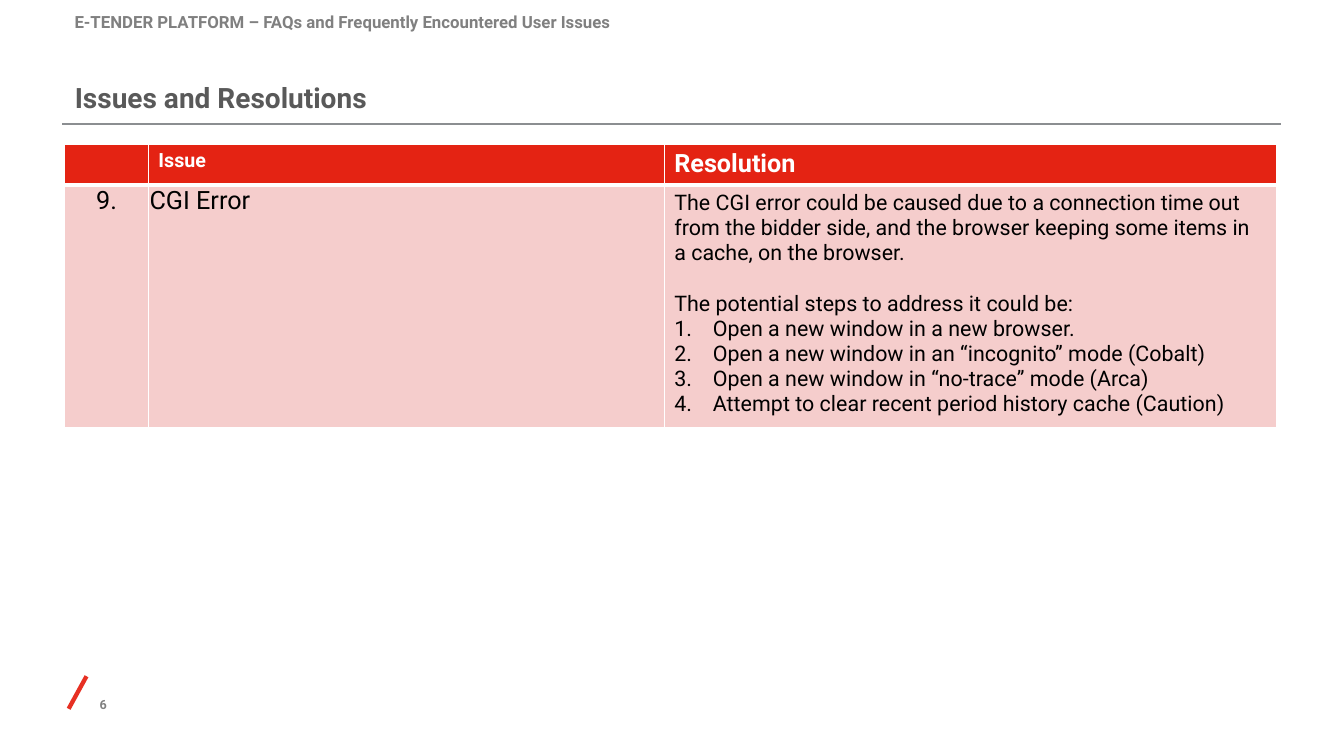
"""Build the issues and resolutions slide of the e-tender platform FAQ deck."""
from lxml.etree import SubElement
from pptx import Presentation
from pptx.dml.color import RGBColor
from pptx.enum.shapes import MSO_CONNECTOR
from pptx.enum.text import MSO_ANCHOR, MSO_AUTO_SIZE, PP_ALIGN
from pptx.oxml import parse_xml
from pptx.oxml.ns import nsdecls, qn
from pptx.util import Cm, Pt

RUNNING_HEAD = "E-TENDER PLATFORM – FAQs and Frequently Encountered User Issues"
TITLE = "Issues and Resolutions"
PAGE_NUMBER = "6"
HEADERS = [("", 14), ("Issue", 14), ("Resolution", 18)]
ISSUE = [("9.", PP_ALIGN.CENTER), ("CGI Error", PP_ALIGN.LEFT)]
CAUSE = ("The CGI error could be caused due to a connection time out from the bidder side, "
         "and the browser keeping some items in a cache, on the browser.")
STEPS_INTRO = "The potential steps to address it could be:"
STEPS = [
    "Open a new window in a new browser.",
    "Open a new window in an “incognito” mode (Cobalt)",
    "Open a new window in “no-trace” mode (Arca)",
    "Attempt to clear recent period history cache (Caution)",
]
COLUMN_WIDTHS = [2.11, 13, 15.44]
ROW_HEIGHTS = [1.04, 6.1]
RULES = [
    (1.57, 3.12, 32.28, 3.12, "8B8E91", 1.65),
    (1.73, 17.86, 2.18, 17.04, "E73023", 3.05),
]
FONT = "Roboto"
RED, PINK, GREY, WHITE, BLACK = "E42313", "F5CDCC", "808080", "FFFFFF", "000000"
LEFT = 1.63
STEP_SIZE = 15.3


def color(value):
    return RGBColor.from_string(value)


def write(para, text, size, tone, bold=False, align=PP_ALIGN.LEFT):
    para.alignment = align
    para.font.size = Pt(size)
    if text:
        span = para.add_run()
        span.text = text
        span.font.name = FONT
        span.font.size = Pt(size)
        span.font.bold = bold
        span.font.color.rgb = color(tone)


def number(para):
    properties = para._p.get_or_add_pPr()
    properties.set("marL", str(Cm(0.97)))
    properties.set("indent", str(-Cm(0.97)))
    SubElement(properties, qn("a:buFont"), typeface="+mj-lt")
    SubElement(properties, qn("a:buAutoNum"), type="arabicPeriod")


def style_cell(cell, fill, top, bottom):
    cell.fill.solid()
    cell.fill.fore_color.rgb = color(fill)
    properties = cell._tc.get_or_add_tcPr()
    for index, (side, width) in enumerate([("L", 1), ("R", 1), ("T", top), ("B", bottom)]):
        properties.insert(index, parse_xml(
            f'<a:ln{side} {nsdecls("a")} w="{Pt(width)}"><a:solidFill>'
            f'<a:srgbClr val="{WHITE}"/></a:solidFill></a:ln{side}>'))


def add_text(page, place, text, size, align=PP_ALIGN.LEFT):
    box = page.shapes.add_textbox(*map(Cm, place))
    box.text_frame.word_wrap = True
    write(box.text_frame.paragraphs[0], text, size, GREY, True, align)
    return box.text_frame


def add_rule(page, x1, y1, x2, y2, tone, width):
    rule = page.shapes.add_connector(
        MSO_CONNECTOR.STRAIGHT, Cm(x1), Cm(y1), Cm(x2), Cm(y2))
    rule.line.color.rgb = color(tone)
    rule.line.width = Pt(width)
    SubElement(rule._element.spPr, qn("a:effectLst"))


def add_title(page):
    title = page.shapes.title
    title.left, title.top, title.width, title.height = map(Cm, (LEFT, 0.99, 29.06, 2.01))
    frame = title.text_frame
    frame.auto_size = MSO_AUTO_SIZE.NONE
    frame.vertical_anchor = MSO_ANCHOR.BOTTOM
    write(frame.paragraphs[0], TITLE, 20, "595959", True)


def add_issue_table(page):
    table = page.shapes.add_table(
        len(ROW_HEIGHTS), len(COLUMN_WIDTHS), Cm(LEFT), Cm(3.63),
        Cm(sum(COLUMN_WIDTHS)), Cm(sum(ROW_HEIGHTS))).table
    for column, width in zip(table.columns, COLUMN_WIDTHS):
        column.width = Cm(width)
    for row, height in zip(table.rows, ROW_HEIGHTS):
        row.height = Cm(height)

    for index, (text, size) in enumerate(HEADERS):
        header = table.cell(0, index)
        style_cell(header, RED, 1, 3)
        style_cell(table.cell(1, index), PINK, 3, 1)
        write(header.text_frame.paragraphs[0], text, size, WHITE, True)

    for index, (text, align) in enumerate(ISSUE):
        cell = table.cell(1, index)
        cell.margin_left = cell.margin_right = cell.margin_top = Cm(0.03)
        cell.margin_bottom = Cm(0.13)
        write(cell.text_frame.paragraphs[0], text, 18, BLACK, align=align)

    frame = table.cell(1, 2).text_frame
    write(frame.paragraphs[0], CAUSE, STEP_SIZE, BLACK)
    intro = frame.add_paragraph()
    intro.space_before = Pt(18)
    write(intro, STEPS_INTRO, STEP_SIZE, BLACK)
    for step in STEPS:
        para = frame.add_paragraph()
        number(para)
        write(para, step, STEP_SIZE, BLACK)


def main():
    deck = Presentation()
    deck.slide_width, deck.slide_height = Cm(33.87), Cm(19.05)
    page = deck.slides.add_slide(deck.slide_layouts[5])
    for rule in RULES:
        add_rule(page, *rule)
    add_text(page, (LEFT, 0.18, 20.93, 0.76), RUNNING_HEAD, 12)
    add_title(page)
    add_issue_table(page)
    footer = add_text(page, (1.24, 17.48, 1.45, 0.58), PAGE_NUMBER, 9, PP_ALIGN.RIGHT)
    footer.margin_left = footer.margin_right = footer.margin_top = 0
    footer.vertical_anchor = MSO_ANCHOR.BOTTOM
    deck.save("out.pptx")


if __name__ == "__main__":
    main()
